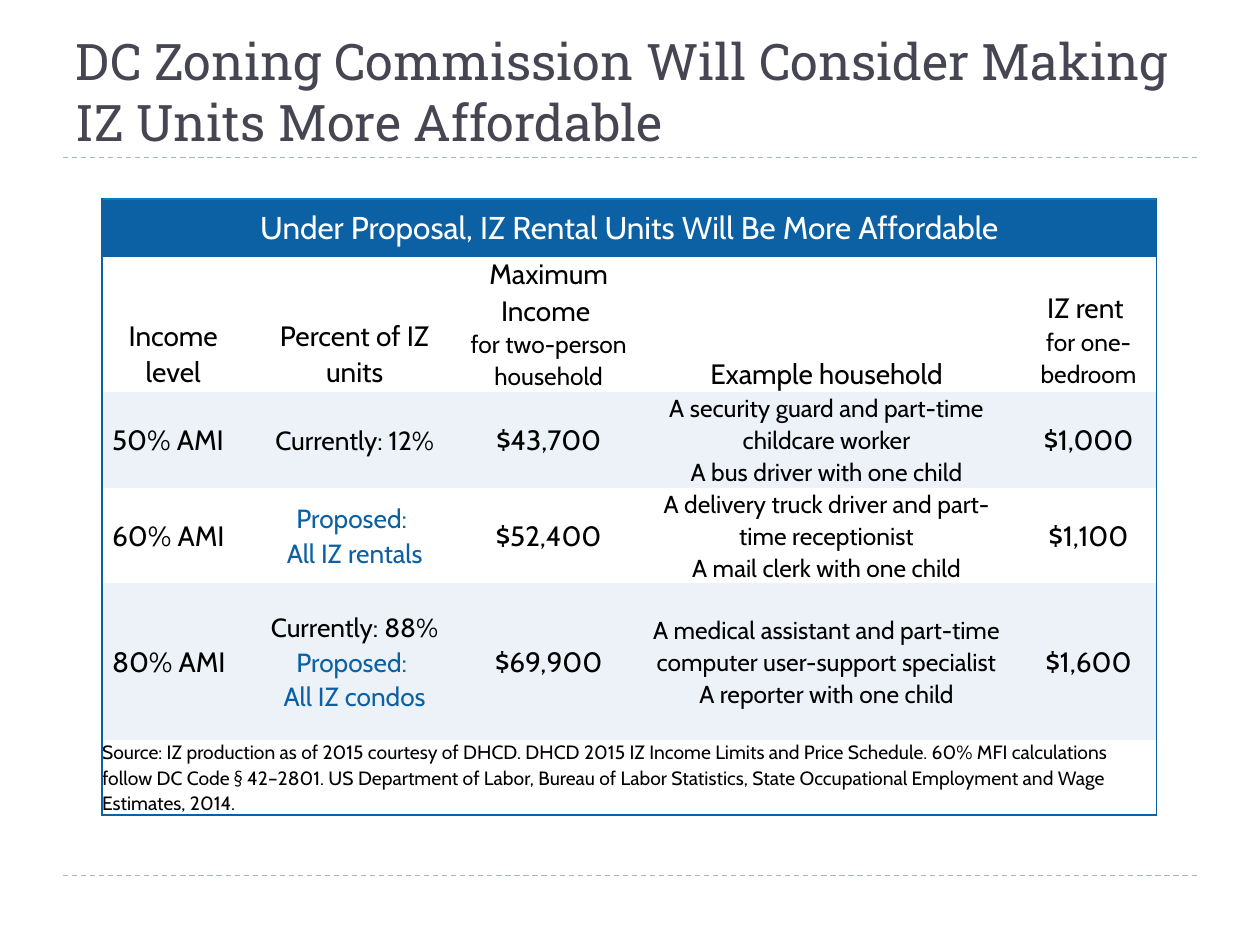
from dataclasses import dataclass

from lxml import etree
from pptx import Presentation
from pptx.dml.color import RGBColor
from pptx.enum.dml import MSO_LINE
from pptx.enum.shapes import MSO_CONNECTOR
from pptx.enum.text import MSO_ANCHOR, PP_ALIGN
from pptx.oxml.ns import qn
from pptx.util import Inches, Pt

DASH = MSO_LINE.DASH
STRAIGHT = MSO_CONNECTOR.STRAIGHT
TOP, MID, LOW = MSO_ANCHOR.TOP, MSO_ANCHOR.MIDDLE, MSO_ANCHOR.BOTTOM
LEFT, CENTER = PP_ALIGN.LEFT, PP_ALIGN.CENTER


@dataclass(frozen=True)
class Theme:
    serif: str = "Roboto Slab"
    sans: str = "Cabin"
    title: str = "464653"
    rule: str = "9FB8CD"
    blue: str = "0C61A4"
    edge: str = "0081C6"
    band: str = "ECF2F8"
    white: str = "FFFFFF"
    black: str = "000000"
    head: float = 28.8
    banner: float = 18
    large: float = 16
    mid: float = 15
    small: float = 14
    note: float = 11


T = Theme()
WIDE, HIGH = 10, 7.5
COLS = (1.13, 1.75, 1.33, 3.08, 1.08)
ROWS = (0.45, 1.08, 0.76, 0.76, 1.24, 0.6)
PAD, FLAT, SIDES = (0.08, 0.02), (0, 0), (0.08, 0)
PADS = (PAD, PAD, FLAT, SIDES, PAD)
SIZES = (T.large, T.mid, T.large, T.small, T.large)

BANNER = "Under Proposal, IZ Rental Units Will Be More Affordable"
HEADS = (
    (("Income level", T.large),),
    (("Percent of IZ units", T.large),),
    (("Maximum", T.large), ("Income ", T.large),
     ("for two-person household", T.small)),
    (("Example household", T.large),),
    (("IZ rent ", T.large), ("for one-bedroom", T.small)),
)
# A line that starts with "*" belongs to the proposal and is set in blue.
LEVELS = (
    (("50% AMI",), ("Currently: 12%",), ("$43,700",),
     ("A security guard and part-time childcare worker",
      "A bus driver with one child"), ("$1,000",)),
    (("60% AMI",), ("*Proposed: ", "*All IZ rentals"), ("$52,400",),
     ("A delivery truck driver and part-time receptionist",
      "A mail clerk with one child"), ("$1,100",)),
    (("80% AMI",), ("Currently: 88%", "*Proposed: ", "*All IZ condos"),
     ("$69,900",),
     ("A medical assistant and part-time computer user-support specialist",
      "A reporter with one child"), ("$1,600",)),
)
SOURCE = (
    "Source: IZ production as of 2015 courtesy of DHCD. DHCD 2015 IZ Income "
    "Limits and Price Schedule. 60% MFI calculations follow DC Code § 42–2801. "
    "US Department of Labor, Bureau of Labor Statistics, State Occupational "
    "Employment and Wage Estimates, 2014."
)


def tint(text):
    return RGBColor.from_string(text)


def apply(item, form):
    for name, value in form.items():
        setattr(item, name, value)


def write(frame, lines, face, align, pitch=1.0):
    """Fill a text frame with (text, size, colour) paragraphs."""
    for i, (text, size, color) in enumerate(lines):
        para = frame.paragraphs[0] if i == 0 else frame.add_paragraph()
        apply(para, {"alignment": align, "line_spacing": pitch})
        run = para.add_run()
        run.text = text
        apply(run.font, {"name": face, "size": Pt(size), "bold": False})
        run.font.color.rgb = tint(color)


def add_title(slide, box, text):
    shape = slide.shapes.add_textbox(*map(Inches, box))
    apply(shape.text_frame, {"word_wrap": True, "vertical_anchor": LOW})
    write(shape.text_frame, [(text, T.head, T.title)], T.serif, LEFT)


def add_rule(slide, box):
    x, y, w, h = box
    line = slide.shapes.add_connector(
        STRAIGHT, *map(Inches, (x, y, x + w, y + h)))
    apply(line.line, {"width": Pt(0.75), "dash_style": DASH})
    line.line.color.rgb = tint(T.rule)
    etree.SubElement(line._element.spPr, qn("a:effectLst"))


def set_edges(cell, edges):
    """Draw the sides named in edges (L, R, T, B) and clear the others."""
    props = cell._tc.get_or_add_tcPr()
    for i, side in enumerate("LRTB"):
        line = etree.Element(qn(f"a:ln{side}"), w=str(Pt(1)))
        if side in edges:
            fill = etree.SubElement(line, qn("a:solidFill"))
            etree.SubElement(fill, qn("a:srgbClr"), val=edges[side])
        else:
            etree.SubElement(line, qn("a:noFill"))
        props.insert(i, line)


def set_cell(cell, lines, pad, anchor, align):
    side, end = map(Inches, pad)
    apply(cell, {"margin_left": side, "margin_right": side,
                 "margin_top": end, "margin_bottom": end,
                 "vertical_anchor": anchor})
    write(cell.text_frame, lines, T.sans, align, 1.07)


def style_grid(table):
    """Set fills by row, and lines round the table and under the banner."""
    fills = (T.blue, T.white, T.band, T.white, T.band, T.white)
    last = len(ROWS) - 1
    for r, fill in enumerate(fills):
        for c in range(len(COLS)):
            cell = table.cell(r, c)
            cell.fill.solid()
            cell.fill.fore_color.rgb = tint(fill)
            edges = {}
            if c == 0:
                edges["L"] = T.blue
            if c == len(COLS) - 1 or cell.is_merge_origin:
                edges["R"] = T.blue
            if r < 2:
                edges["T"] = T.blue if r else T.edge
            if r in (0, last):
                edges["B"] = T.blue
            set_edges(cell, edges)


def add_grid(slide, box):
    w, h = box[2:]
    table = slide.shapes.add_table(
        len(ROWS), len(COLS), *map(Inches, box)).table
    apply(table, {"first_row": False, "horz_banding": False})
    for col, part in zip(table.columns, COLS):
        col.width = Inches(w * part / sum(COLS))
    for row, part in zip(table.rows, ROWS):
        row.height = Inches(h * part / sum(ROWS))
    last = len(ROWS) - 1
    for r in (0, last):
        table.cell(r, 0).merge(table.cell(r, len(COLS) - 1))
    style_grid(table)

    set_cell(table.cell(0, 0), [(BANNER, T.banner, T.white)],
             FLAT, MID, CENTER)
    for c, head in enumerate(HEADS):
        pad = FLAT if c in (2, 3) else PAD
        set_cell(table.cell(1, c), [(*part, T.black) for part in head],
                 pad, LOW, CENTER)
    for r, level in enumerate(LEVELS, 2):
        for c, texts in enumerate(level):
            lines = [(text.lstrip("*"), SIZES[c],
                      T.blue if text.startswith("*") else T.black)
                     for text in texts]
            set_cell(table.cell(r, c), lines, PADS[c], MID,
                     CENTER if c else LEFT)
    set_cell(table.cell(last, 0), [(SOURCE, T.note, T.black)],
             FLAT, TOP, LEFT)


def main():
    deck = Presentation()
    apply(deck, {"slide_width": Inches(WIDE), "slide_height": Inches(HIGH)})
    slide = deck.slides.add_slide(deck.slide_layouts[6])
    side = 0.05 * WIDE
    span = WIDE - 2 * side
    for y in (6.95, 1.25):
        add_rule(slide, (side, y, span, 0))
    add_title(slide, (side, 0.17, span, 1.08),
              "DC Zoning Commission Will Consider Making "
              "IZ Units More Affordable")
    add_grid(slide, (0.81, 1.58, sum(COLS), sum(ROWS)))
    deck.save("out.pptx")


if __name__ == "__main__":
    main()
